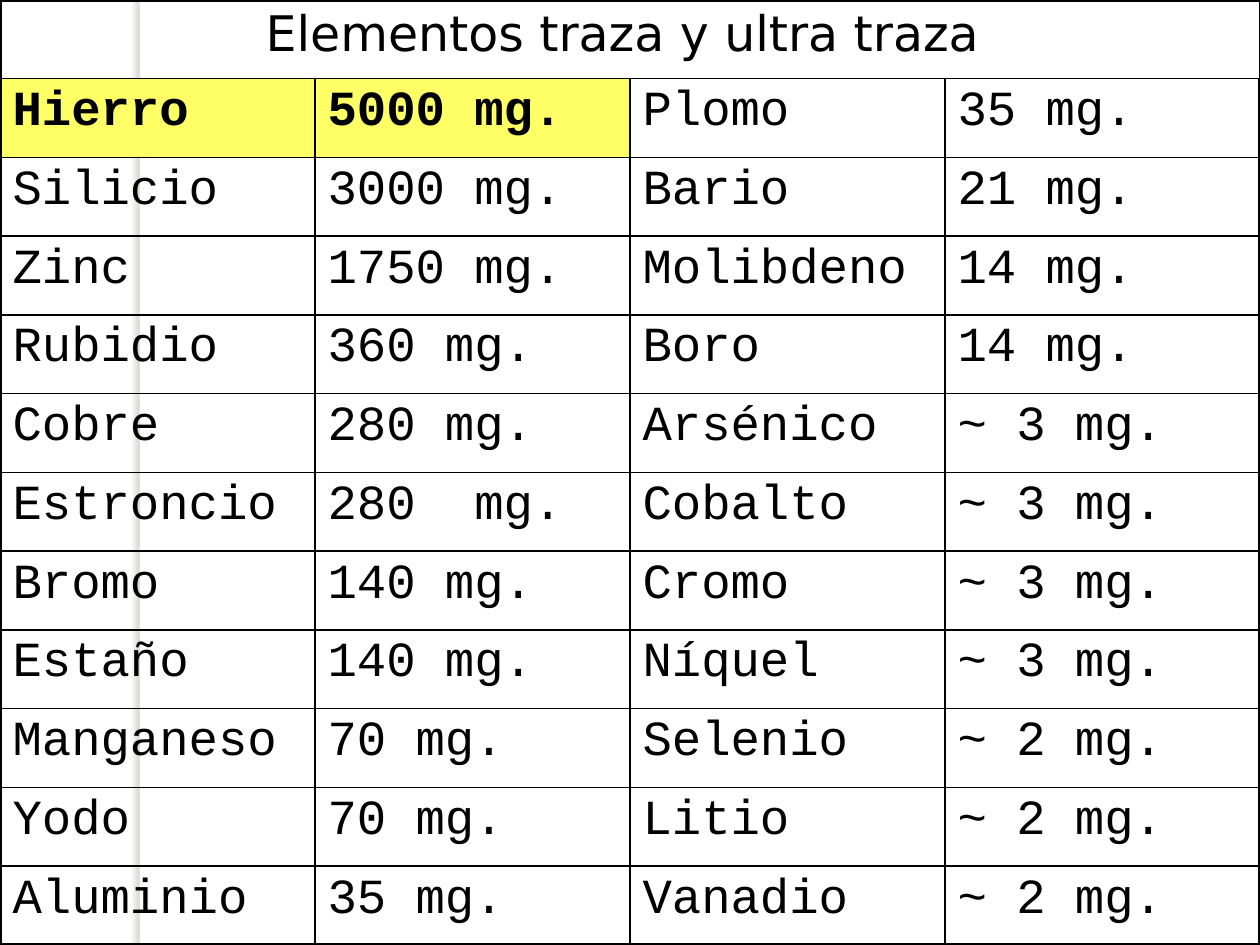
"""Build a one-slide table of trace and ultra-trace elements."""
import lxml.etree
import pptx
import pptx.dml.color
import pptx.enum.shapes
import pptx.enum.text
import pptx.oxml
import pptx.oxml.ns
import pptx.util

COLOURS = {"paper": "FFFFFF", "ink": "000000", "highlight": "FFFF66", "shadow": "736F63"}
WIDTH, HEIGHT = pptx.util.Cm(25.4), pptx.util.Cm(19.05)
TITLE = "Elementos traza y ultra traza "
ELEMENTS = [
    ("Hierro", "5000 mg.", "Plomo", "35 mg."),
    ("Silicio", "3000 mg.", "Bario", "21 mg."),
    ("Zinc", "1750 mg.", "Molibdeno", "14 mg."),
    ("Rubidio", "360 mg.", "Boro", "14 mg."),
    ("Cobre", "280 mg.", "Arsénico", "~ 3 mg."),
    ("Estroncio", "280  mg.", "Cobalto", "~ 3 mg."),
    ("Bromo", "140 mg.", "Cromo", "~ 3 mg."),
    ("Estaño", "140 mg.", "Níquel", "~ 3 mg."),
    ("Manganeso", "70 mg.", "Selenio", "~ 2 mg."),
    ("Yodo", "70 mg.", "Litio", "~ 2 mg."),
    ("Aluminio", "35 mg.", "Vanadio", "~ 2 mg."),
]


class SlideBuilder:
    """Hold the text style and the current slide."""

    def __init__(self, slide):
        self.slide = slide
        self.size = pptx.util.Pt(28)
        self.title_font = "DejaVu Sans"
        self.body_font = "Courier New"
        self.inner_line = pptx.util.Pt(1)
        self.outer_line = pptx.util.Pt(2.25)

    def colour(self, name):
        return pptx.dml.color.RGBColor.from_string(COLOURS[name])

    def background(self):
        fill = self.slide.background.fill
        fill.solid()
        fill.fore_color.rgb = self.colour("paper")

    def shadowed_strip(self, left, width):
        strip = self.slide.shapes.add_shape(
            pptx.enum.shapes.MSO_SHAPE.RECTANGLE, left, 0, width, HEIGHT)
        strip.fill.solid()
        strip.fill.fore_color.rgb = self.colour("paper")
        strip.line.fill.background()
        strip.shadow.inherit = False
        effects = strip.element.spPr.find(pptx.oxml.ns.qn("a:effectLst"))
        effects.append(pptx.oxml.parse_xml(
            f'<a:outerShdw {pptx.oxml.ns.nsdecls("a")} blurRad="38100" dist="38100" '
            f'dir="10800000" algn="r" rotWithShape="0"><a:srgbClr val="{COLOURS["shadow"]}">'
            '<a:alpha val="25000"/></a:srgbClr></a:outerShdw>'))

    def table(self, title, rows):
        row_count, column_count = len(rows) + 1, len(rows[0])
        table = self.slide.shapes.add_table(
            row_count, column_count, 0, 0, WIDTH, HEIGHT).table
        table.first_row = table.horz_banding = False
        for row in range(row_count):
            for column in range(column_count):
                self.borders(table.cell(row, column), {
                    "L": column == 0, "R": column == column_count - 1,
                    "T": row == 0, "B": row == row_count - 1})
                table.cell(row, column).fill.background()
        heading = table.cell(0, 0)
        heading.merge(table.cell(0, column_count - 1))
        self.text(heading, title, self.title_font, pptx.enum.text.PP_ALIGN.CENTER)
        for row, values in enumerate(rows, start=1):
            for column, value in enumerate(values):
                cell = table.cell(row, column)
                highlighted = row == 1 and column < 2
                self.text(cell, value, self.body_font,
                          pptx.enum.text.PP_ALIGN.JUSTIFY, highlighted)
                if highlighted:
                    cell.fill.solid()
                    cell.fill.fore_color.rgb = self.colour("highlight")

    def borders(self, cell, outer_sides):
        properties = cell._tc.get_or_add_tcPr()
        for side, is_outer in outer_sides.items():
            width = self.outer_line if is_outer else self.inner_line
            properties.append(pptx.oxml.parse_xml(
                f'<a:ln{side} {pptx.oxml.ns.nsdecls("a")} w="{int(width)}"><a:solidFill>'
                f'<a:srgbClr val="{COLOURS["ink"]}"/></a:solidFill></a:ln{side}>'))

    def text(self, cell, text, font, alignment, bold=False):
        paragraph = cell.text_frame.paragraphs[0]
        paragraph.alignment = alignment
        spacing = lxml.etree.SubElement(
            paragraph._p.get_or_add_pPr(), pptx.oxml.ns.qn("a:spcBef"))
        lxml.etree.SubElement(spacing, pptx.oxml.ns.qn("a:spcPct"), val="20000")
        run = paragraph.add_run()
        run.text = text
        run.font.name = font
        run.font.size = self.size
        run.font.bold = bold
        run.font.color.rgb = self.colour("ink")


def main():
    presentation = pptx.Presentation()
    presentation.slide_width, presentation.slide_height = WIDTH, HEIGHT
    blank_layout = presentation.slide_layouts[6]
    builder = SlideBuilder(presentation.slides.add_slide(blank_layout))
    builder.background()
    builder.shadowed_strip(pptx.util.Cm(2.82), pptx.util.Cm(0.2))
    builder.table(TITLE, ELEMENTS)
    presentation.save("out.pptx")


if __name__ == "__main__":
    main()
